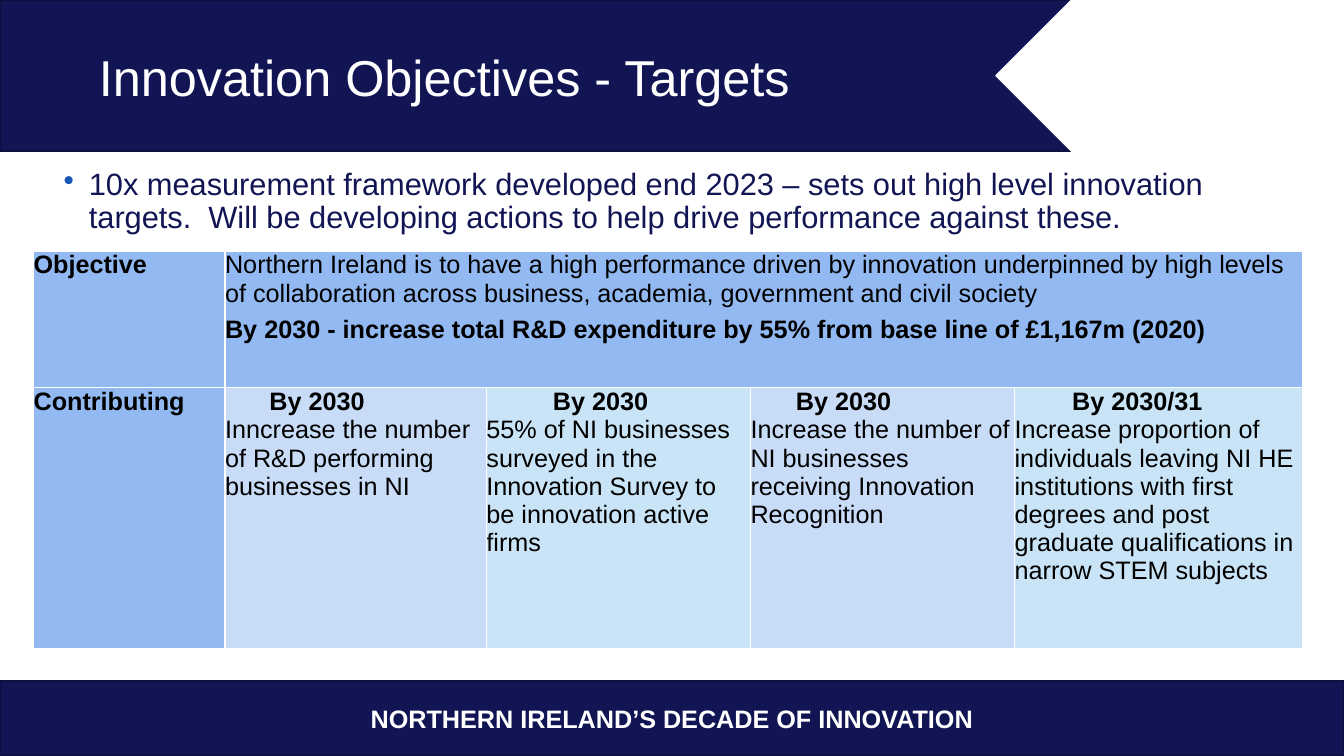
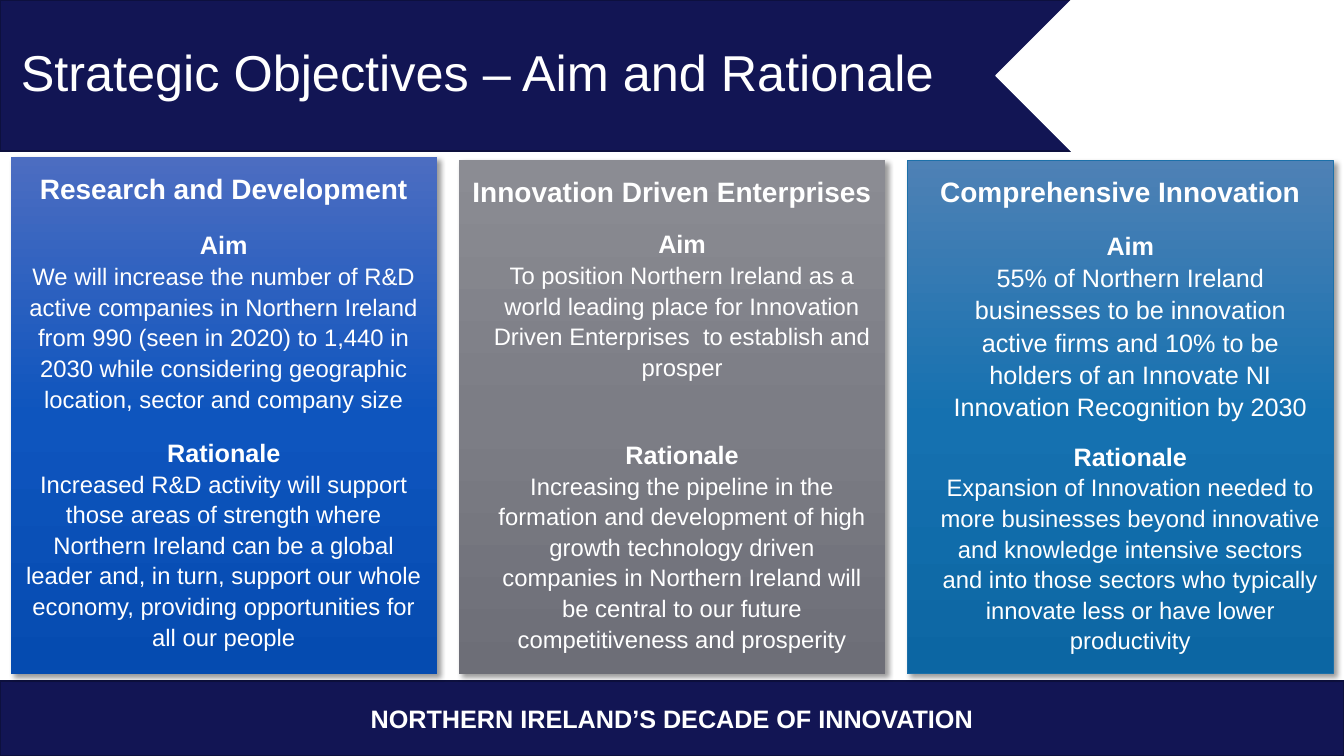
from copy import deepcopy
from dataclasses import dataclass

from pptx import Presentation
from pptx.dml.color import RGBColor
from pptx.enum.shapes import MSO_SHAPE
from pptx.enum.text import MSO_ANCHOR, PP_ALIGN
from pptx.oxml import parse_xml
from pptx.oxml.ns import nsdecls, qn
from pptx.util import Emu, Inches, Pt

COLORS = {
    "navy": "121554", "navy_edge": "0D103E", "white": "FFFFFF", "black": "000000",
    "bullet": "1657B6", "head": "92B9F2", "lilac": "C8DCF8", "sky": "C9E4F6",
    "teal_edge": "1C70A9",
}
GRADIENTS = {
    "blue": ("4C6DC1", "0E55BE", "054BB0"),
    "grey": ("8B8C93", "7C7D85", "6D6E77"),
    "teal": ("4E81B5", "1571B0", "0C66A3"),
}
FONT = "Arial"


def rgb(name):
    return RGBColor.from_string(COLORS[name])


@dataclass
class Line:
    text: str
    size: float = 18
    bold: bool = False
    color: str = "black"
    align: PP_ALIGN = PP_ALIGN.LEFT
    spacing: float = 1.0
    after: float = 0
    indent: float = 0
    bullet: bool = False


class Deck:
    """Style and current page; lengths are percentages of the slide's size."""

    def __init__(self):
        self.deck = Presentation()
        self.deck.slide_width, self.deck.slide_height = Inches(13.33), Inches(7.5)
        self.layout = self.deck.slide_layouts[5]
        self.page = None

    def place(self, left, top, width, height):
        across, down = self.deck.slide_width / 100, self.deck.slide_height / 100
        return [Emu(round(n)) for n in
                (left * across, top * down, width * across, height * down)]

    def fill_text(self, frame, lines, anchor=MSO_ANCHOR.TOP):
        frame.word_wrap = True
        frame.vertical_anchor = anchor
        for number, line in enumerate(lines):
            para = frame.add_paragraph() if number else frame.paragraphs[0]
            para.alignment = line.align
            para.line_spacing = line.spacing
            para.space_before, para.space_after = Pt(0), Pt(line.after)
            properties = para._p.get_or_add_pPr()
            properties.set("marL", str(Inches(line.indent)))
            properties.set("indent", str(-Inches(line.indent) if line.bullet else 0))
            if line.bullet:
                properties.append(parse_xml(
                    f'<a:buClr {nsdecls("a")}><a:srgbClr val="{COLORS["bullet"]}"/></a:buClr>'))
                properties.append(parse_xml(f'<a:buChar {nsdecls("a")} char="•"/>'))
            para.add_run().text = line.text
            font = para.font
            font.name, font.size, font.bold = FONT, Pt(line.size), line.bold
            font.color.rgb = rgb(line.color)

    def shape(self, kind, area, fill=None, edge=None, weight=1):
        box = self.page.shapes.add_shape(kind, *self.place(*area))
        box.shadow.inherit = False
        if fill:
            box.fill.solid()
            box.fill.fore_color.rgb = rgb(fill)
        if edge:
            box.line.color.rgb = rgb(edge)
            box.line.width = Pt(weight)
        else:
            box.line.fill.background()
        return box

    def brand_layout(self):
        """Put the bands and the footer on the shared layout."""
        band = self.shape(MSO_SHAPE.RECTANGLE, (0, 0, 100, 20), "navy", "navy_edge")
        footer = self.shape(MSO_SHAPE.RECTANGLE, (0, 90.1, 100, 9.9), "navy", "navy_edge")
        self.fill_text(footer.text_frame,
                       [Line("NORTHERN IRELAND’S DECADE OF INNOVATION", bold=True,
                             color="white", align=PP_ALIGN.CENTER)], MSO_ANCHOR.MIDDLE)
        notch = self.shape(MSO_SHAPE.PENTAGON, (74.1, 0, 25.9, 20), "white", "white")
        notch.rotation = 180
        for part in (band, footer, notch):
            self.layout.shapes._spTree.append(part._element)

    def add_page(self, title, area):
        self.page = self.deck.slides.add_slide(self.layout)
        if len(self.deck.slides) == 1:
            self.brand_layout()
        holder = self.page.shapes.title
        holder.left, holder.top, holder.width, holder.height = self.place(*area)
        self.fill_text(holder.text_frame, [Line(title, 36, color="white", spacing=0.9)],
                       MSO_ANCHOR.MIDDLE)

    def text(self, area, lines):
        box = self.page.shapes.add_textbox(*self.place(*area))
        self.fill_text(box.text_frame, lines)

    def table(self, left, top, widths, heights):
        area = self.place(left, top, sum(widths), sum(heights))
        table = self.page.shapes.add_table(len(heights), len(widths), *area).table
        table.first_row = table.horz_banding = False
        for column, width in zip(table.columns, widths):
            column.width = self.place(0, 0, width, 0)[2]
        for row, height in zip(table.rows, heights):
            row.height = self.place(0, 0, 0, height)[3]
        return table

    def cell(self, cell, fill, lines=()):
        cell.margin_left = cell.margin_right = cell.margin_top = cell.margin_bottom = 0
        for side in "LRTB":
            cell._tc.get_or_add_tcPr().append(parse_xml(
                f'<a:ln{side} {nsdecls("a")} w="12700"><a:solidFill>'
                f'<a:srgbClr val="{COLORS["white"]}"/></a:solidFill></a:ln{side}>'))
        cell.fill.solid()
        cell.fill.fore_color.rgb = rgb(fill)
        self.fill_text(cell.text_frame, lines)

    def card(self, area, gradient, lines, edge=None):
        box = self.shape(MSO_SHAPE.RECTANGLE, area, edge=edge, weight=0.5)
        # Three-stop gradient running downwards
        box.fill.gradient()
        box.fill.gradient_angle = 270
        stops = box._element.spPr.find(".//" + qn("a:gsLst"))
        stops.insert(1, deepcopy(stops[0]))
        for stop, color, position in zip(box.fill.gradient_stops,
                                         GRADIENTS[gradient], (0, 0.5, 1)):
            stop.color.rgb = RGBColor.from_string(color)
            stop.position = position
        # Soft shadow to the lower right
        box._element.spPr.find(qn("a:effectLst")).append(parse_xml(
            f'<a:outerShdw {nsdecls("a")} blurRad="{Pt(4)}" dist="{Pt(3)}" dir="2700000">'
            f'<a:srgbClr val="{COLORS["black"]}"><a:alpha val="40000"/></a:srgbClr>'
            '</a:outerShdw>'))
        frame = box.text_frame
        frame.margin_left = frame.margin_right = Inches(0.12)
        frame.margin_top = frame.margin_bottom = Inches(0.12)
        self.fill_text(frame, lines)


def targets_page(deck):
    deck.add_page("Innovation Objectives - Targets", (6.6, 3.2, 66.2, 14.8))
    deck.text((4, 21.7, 88.4, 11), [Line(
        "10x measurement framework developed end 2023 – sets out high level innovation "
        "targets.  Will be developing actions to help drive performance against these.",
        22, color="navy", spacing=0.9, indent=0.25, bullet=True)])

    # Objective row over the contributing targets
    table = deck.table(2.5, 33.2, (14.25, 19.45, 19.65, 19.65, 21.45), (18.1, 34.5))
    table.cell(0, 1).merge(table.cell(0, 4))
    deck.cell(table.cell(0, 0), "head", [Line("Objective", bold=True)])
    deck.cell(table.cell(0, 1), "head", [
        Line("Northern Ireland is to have a high performance driven by innovation "
             "underpinned by high levels of collaboration across business, academia, "
             "government and civil society", after=6),
        Line("By 2030 - increase total R&D expenditure by 55% from base line of "
             "£1,167m (2020)", bold=True)])
    deck.cell(table.cell(1, 0), "head", [Line("Contributing", bold=True)])
    targets = [
        ("By 2030", 0.44, "Inncrease the number of R&D performing businesses in NI"),
        ("By 2030", 0.66, "55% of NI businesses surveyed in the Innovation Survey to be "
                          "innovation active firms"),
        ("By 2030", 0.45, "Increase the number of NI businesses receiving Innovation "
                          "Recognition"),
        ("By 2030/31", 0.57, "Increase proportion of individuals leaving NI HE institutions "
                             "with first degrees and post graduate qualifications in narrow "
                             "STEM subjects"),
    ]
    for column, (year, indent, target) in enumerate(targets, 1):
        deck.cell(table.cell(1, column), "lilac" if column % 2 else "sky",
                  [Line(year, bold=True, indent=indent), Line(target)])


def rationale_page(deck):
    deck.add_page("Strategic Objectives – Aim and Rationale", (0.8, 2.5, 77.6, 14.8))
    # Gradient, edge, top, indent, aim size, gaps after heading and aim, then texts
    cards = [
        ("blue", None, 20.8, 0, 17, 16, 16, "Research and Development",
         "We will increase the number of R&D active companies in Northern Ireland from 990 "
         "(seen in 2020) to 1,440 in 2030 while considering geographic location, sector and "
         "company size",
         "Increased R&D activity will support those areas of strength where Northern Ireland "
         "can be a global leader and, in turn, support our whole economy, providing "
         "opportunities for all our people"),
        ("grey", None, 21.2, 0.2, 17, 13, 40, "Innovation Driven Enterprises",
         "To position Northern Ireland as a world leading place for Innovation Driven "
         "Enterprises  to establish and prosper",
         "Increasing the pipeline in the formation and development of high growth technology "
         "driven companies in Northern Ireland will be central to our future competitiveness "
         "and prosperity"),
        ("teal", "teal_edge", 21.2, 0.2, 18, 14, 12, "Comprehensive Innovation",
         "55% of Northern Ireland businesses to be innovation active firms and 10% to be "
         "holders of an Innovate NI Innovation Recognition by 2030",
         "Expansion of Innovation needed to more businesses beyond innovative and knowledge "
         "intensive sectors and into those sectors who typically innovate less or have lower "
         "productivity"),
    ]
    for number, (gradient, edge, top, indent, aim_size, head_gap, aim_gap,
                 heading, aim, rationale) in enumerate(cards):
        rows = [(heading, 20, True, head_gap, 0), ("Aim", 18, True, 0, indent),
                (aim, aim_size, False, aim_gap, indent), ("Rationale", 18, True, 0, indent),
                (rationale, 17, False, 0, indent)]
        lines = [Line(text, size, bold, "white", PP_ALIGN.CENTER, 1.07, after, inset)
                 for text, size, bold, after, inset in rows]
        deck.card((0.8 + 33.35 * number, top, 31.7, 89.1 - top), gradient, lines, edge)


def main():
    deck = Deck()
    targets_page(deck)
    rationale_page(deck)
    deck.deck.save("out.pptx")


if __name__ == "__main__":
    main()
